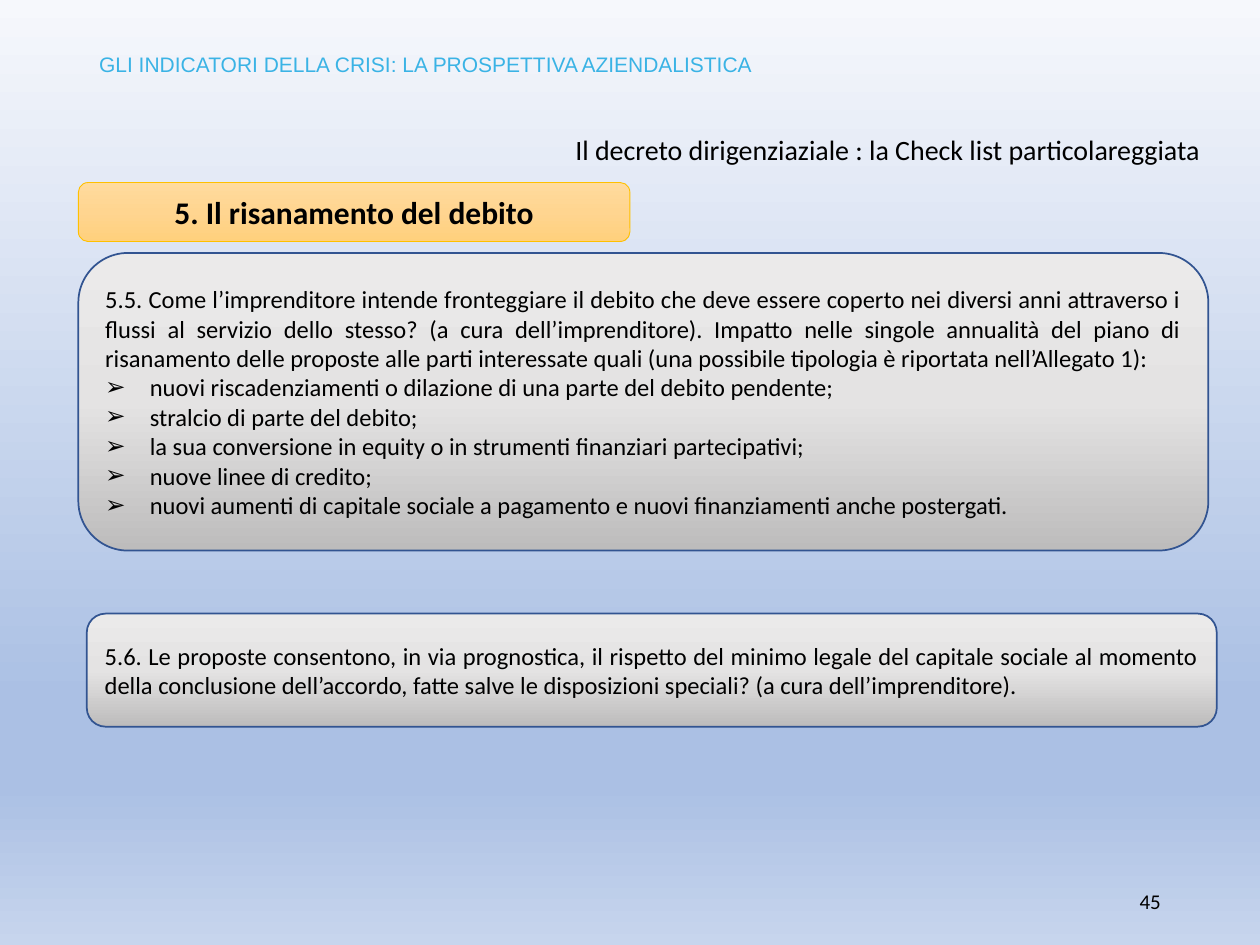
"""Build the slide on the debt recovery check list."""
import pptx
import pptx.dml.color
import pptx.enum.shapes
import pptx.enum.text
import pptx.oxml.ns
import pptx.util
from lxml import etree

Cm = pptx.util.Cm
Pt = pptx.util.Pt
Align = pptx.enum.text.PP_ALIGN
Anchor = pptx.enum.text.MSO_ANCHOR
qn = pptx.oxml.ns.qn

HUES = {"text": "000000", "head": "3AB3E5", "gold": "FFC000", "blue": "325491"}
FADES = {
    "page": {0: "F6F8FC", 74: "ABC0E4", 83: "ABC0E4", 100: "C7D5ED"},
    "gold": {0: "FFDB9E", 50: "FFD590", 100: "FFD07C"},
    "grey": {0: "EBEAEA", 50: "E4E3E3", 100: "BDBCBC"},
}
DEBT = (
    "5.5. Come l’imprenditore intende fronteggiare il debito che deve essere "
    "coperto nei diversi anni attraverso i flussi al servizio dello stesso? "
    "(a cura dell’imprenditore). Impatto nelle singole annualità del piano di "
    "risanamento delle proposte alle parti interessate quali (una possibile "
    "tipologia è riportata nell’Allegato 1):"
)
WAYS = [
    "nuovi riscadenziamenti o dilazione di una parte del debito pendente;",
    "stralcio di parte del debito;",
    "la sua conversione in equity o in strumenti finanziari partecipativi;",
    "nuove linee di credito;",
    "nuovi aumenti di capitale sociale a pagamento e nuovi finanziamenti anche postergati.",
]
LEGAL = (
    "5.6. Le proposte consentono, in via prognostica, il rispetto del minimo "
    "legale del capitale sociale al momento della conclusione dell’accordo, "
    "fatte salve le disposizioni speciali? (a cura dell’imprenditore)."
)


def color(name):
    return pptx.dml.color.RGBColor.from_string(HUES[name])


def fade(fill, root, name):
    fill.gradient()
    fill.gradient_angle = 270
    stops = root.find(".//" + qn("a:gsLst"))
    for old in list(stops):
        stops.remove(old)
    for place, hue in FADES[name].items():
        stop = etree.SubElement(stops, qn("a:gs"), pos=str(place * 1000))
        etree.SubElement(stop, qn("a:srgbClr"), val=hue)


def write(frame, lines, size, align, anchor, font="Calibri", hue="text", bold=False):
    frame.word_wrap = True
    frame.vertical_anchor = anchor
    frame.text = "\n".join(lines)
    for para in frame.paragraphs:
        para.alignment = align
        for run in para.runs:
            run.font.name = font
            run.font.size = Pt(size)
            run.font.bold = bold
            run.font.color.rgb = color(hue)


def label(slide, area, text, size, align, anchor=Anchor.TOP, **style):
    box = slide.shapes.add_textbox(*map(Cm, area))
    write(box.text_frame, [text], size, align, anchor, **style)
    return box


def panel(slide, area, lines, size, align, tint, edge, width, **style):
    kind = pptx.enum.shapes.MSO_SHAPE.ROUNDED_RECTANGLE
    box = slide.shapes.add_shape(kind, *map(Cm, area))
    box.shadow.inherit = False
    fade(box.fill, box._element, tint)
    box.line.color.rgb = color(edge)
    box.line.width = Pt(width)
    write(box.text_frame, lines, size, align, Anchor.MIDDLE, **style)
    return box


def bullet(para):
    props = para._p.get_or_add_pPr()
    props.set("marL", str(Cm(0.9)))
    props.set("indent", str(-Cm(0.9)))
    etree.SubElement(props, qn("a:buFont"), typeface="Arial")
    etree.SubElement(props, qn("a:buChar"), char="➢")


def main():
    deck = pptx.Presentation()
    deck.slide_width, deck.slide_height = Cm(25.4), Cm(19.05)
    slide = deck.slides.add_slide(deck.slide_layouts[6])
    fade(slide.background.fill, slide._element, "page")

    label(slide, (17.93, 17.65, 5.72, 1.02), "45", 12, Align.RIGHT, Anchor.MIDDLE)
    label(slide, (1.75, 0.91, 17.73, 0.76),
          "GLI INDICATORI DELLA CRISI: LA PROSPETTIVA AZIENDALISTICA",
          12, Align.LEFT, font="Arial", hue="head")
    title = label(slide, (11.35, 2.36, 13.18, 1.12),
                  "Il decreto dirigenziaziale : la Check list particolareggiata",
                  16, Align.LEFT, Anchor.BOTTOM)
    title.text_frame.paragraphs[0].line_spacing = 0.9

    panel(slide, (1.58, 3.68, 11.12, 1.19), ["5. Il risanamento del debito"],
          18, Align.CENTER, "gold", "gold", 0.5, bold=True)
    debt = panel(slide, (1.58, 5.1, 22.78, 6), [DEBT, *WAYS],
                 14, Align.JUSTIFY, "grey", "blue", 1)
    for para in debt.text_frame.paragraphs[1:]:
        bullet(para)
    panel(slide, (1.75, 12.37, 22.78, 2.28), [LEGAL],
          14, Align.JUSTIFY, "grey", "blue", 1)
    deck.save("out.pptx")


if __name__ == "__main__":
    main()
